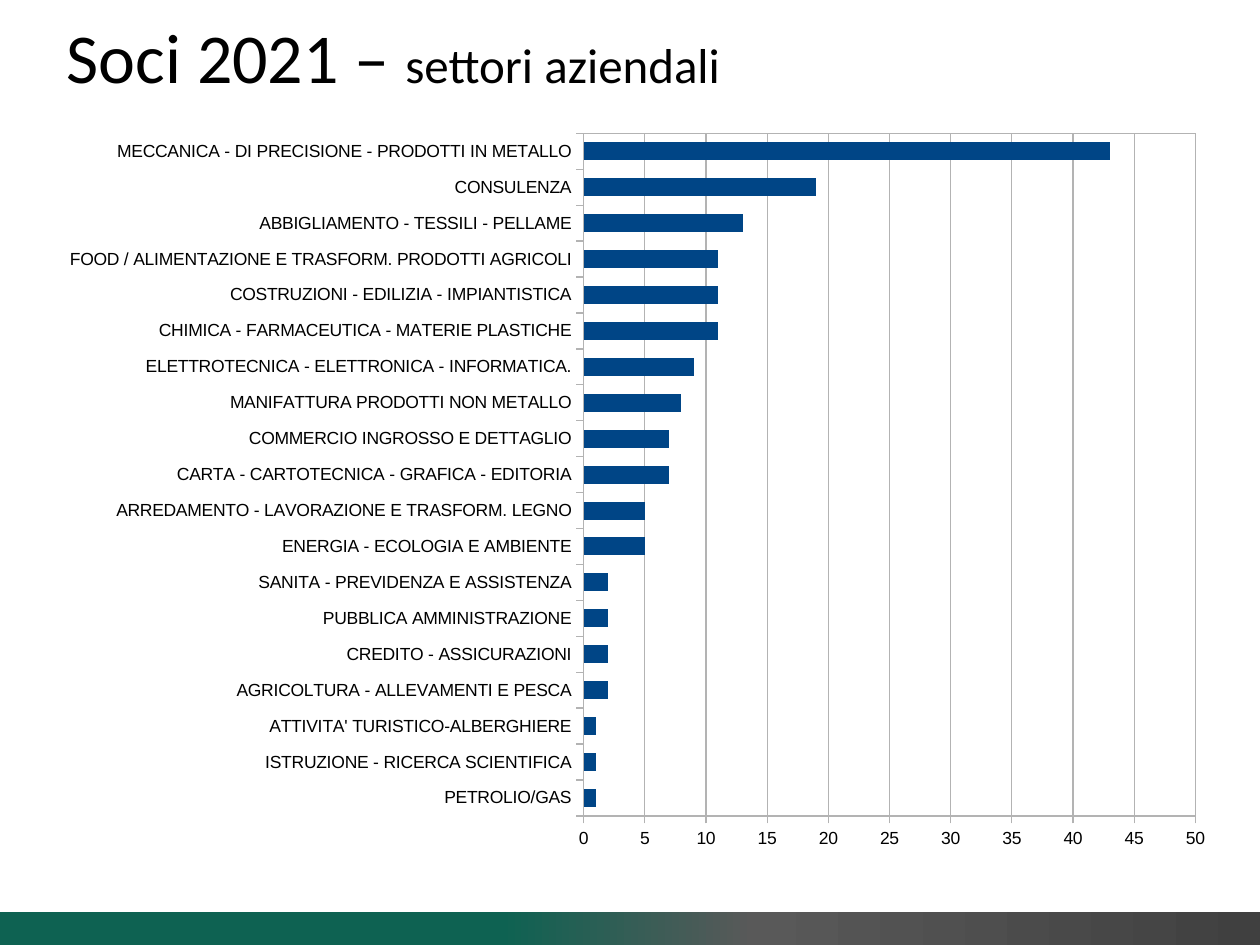
from lxml import etree
from pptx import Presentation
from pptx import util as u
from pptx.chart.data import CategoryChartData
from pptx.dml.color import RGBColor
from pptx.enum import chart as chart_enum, shapes, text
from pptx.oxml import parse_xml
from pptx.oxml.ns import nsdecls, qn

GREY = "B3B3B3"
BLACK = "000000"
SECTORS = [
    ("PETROLIO/GAS", 1),
    ("ISTRUZIONE - RICERCA SCIENTIFICA", 1),
    ("ATTIVITA' TURISTICO-ALBERGHIERE", 1),
    ("AGRICOLTURA - ALLEVAMENTI E PESCA", 2),
    ("CREDITO - ASSICURAZIONI", 2),
    ("PUBBLICA AMMINISTRAZIONE", 2),
    ("SANITA - PREVIDENZA E ASSISTENZA", 2),
    (" ENERGIA - ECOLOGIA E AMBIENTE", 5),
    ("ARREDAMENTO - LAVORAZIONE E TRASFORM. LEGNO", 5),
    ("CARTA - CARTOTECNICA - GRAFICA - EDITORIA", 7),
    ("COMMERCIO INGROSSO E DETTAGLIO", 7),
    ("MANIFATTURA PRODOTTI NON METALLO", 8),
    (" ELETTROTECNICA - ELETTRONICA - INFORMATICA.", 9),
    ("CHIMICA - FARMACEUTICA - MATERIE PLASTICHE", 11),
    ("COSTRUZIONI - EDILIZIA - IMPIANTISTICA", 11),
    ("FOOD / ALIMENTAZIONE E TRASFORM. PRODOTTI AGRICOLI", 11),
    ("ABBIGLIAMENTO - TESSILI - PELLAME", 13),
    ("CONSULENZA", 19),
    ("MECCANICA - DI PRECISIONE - PRODOTTI IN METALLO", 43),
]


def rgb(value):
    return RGBColor.from_string(value)


def format_font(font, name, size, color=BLACK):
    font.name = name
    font.size = u.Pt(size)
    font.color.rgb = rgb(color)


def format_line(line, color=GREY, width=0.75):
    line.color.rgb = rgb(color)
    line.width = u.Pt(width)


def add_title(slide, left, top, width, height):
    title = slide.shapes.title
    title.left, title.top, title.width, title.height = left, top, width, height
    frame = title.text_frame
    frame.word_wrap = True
    frame.auto_size = text.MSO_AUTO_SIZE.NONE
    frame.vertical_anchor = text.MSO_ANCHOR.MIDDLE
    paragraph = frame.paragraphs[0]
    paragraph.alignment = text.PP_ALIGN.LEFT
    for words, size in (("Soci 2021 – ", 40), ("settori aziendali", 28)):
        run = paragraph.add_run()
        run.text = words
        format_font(run.font, "Calibri", size)


def add_footer_band(slide, left, top, width, height):
    band = slide.shapes.add_shape(shapes.MSO_SHAPE.RECTANGLE, left, top, width, height)
    band.shadow.inherit = False
    band.line.fill.background()
    band.fill.gradient()
    band.fill.gradient_angle = 180
    stops = band.fill._xPr.find(".//" + qn("a:gsLst"))
    for stop in list(stops):
        stops.remove(stop)
    for percent, color in ((0, "404040"), (40, "595959"), (60, "0E6252"), (100, "0E6252")):
        stop = etree.SubElement(stops, qn("a:gs"), pos=str(percent * 1000))
        etree.SubElement(stop, qn("a:srgbClr"), val=color)


def set_plot_layout(plot_area, x, y, width, height):
    """Fix the inner plot area, as fractions of the chart."""
    layout = plot_area.find(qn("c:layout"))
    if layout is None:
        layout = etree.Element(qn("c:layout"))
        plot_area.insert(0, layout)
    manual = etree.SubElement(layout, qn("c:manualLayout"))
    settings = (("layoutTarget", "inner"), ("xMode", "edge"), ("yMode", "edge"),
                ("x", x), ("y", y), ("w", width), ("h", height))
    for name, value in settings:
        etree.SubElement(manual, qn("c:" + name), val=str(value))


def area_format(fill, line):
    return parse_xml(
        f'<c:spPr {nsdecls("c", "a")}>{fill}<a:ln w="9525">{line}</a:ln></c:spPr>')


def solid(color):
    return f'<a:solidFill><a:srgbClr val="{color}"/></a:solidFill>'


def add_sector_chart(slide, left, top, width, height):
    data = CategoryChartData()
    data.categories = [name for name, _ in SECTORS]
    data.add_series("Series 1", [count for _, count in SECTORS])
    chart = slide.shapes.add_chart(
        chart_enum.XL_CHART_TYPE.BAR_STACKED, left, top, width, height, data).chart
    chart.has_legend = False
    chart.has_title = False
    format_font(chart.font, "Arial", 10)

    plot = chart.plots[0]
    plot.vary_by_categories = False
    plot.gap_width = 100
    plot.overlap = 100
    bars = plot.series[0].format.fill
    bars.solid()
    bars.fore_color.rgb = rgb("004586")

    for axis in (chart.category_axis, chart.value_axis):
        axis.major_tick_mark = chart_enum.XL_TICK_MARK.OUTSIDE
        axis.minor_tick_mark = chart_enum.XL_TICK_MARK.NONE
        format_font(axis.tick_labels.font, "Arial", 10)
        format_line(axis.format.line)
    chart.value_axis.minimum_scale = 0
    chart.value_axis.maximum_scale = 50
    chart.value_axis.major_unit = 5
    chart.value_axis.has_major_gridlines = True
    format_line(chart.value_axis.major_gridlines.format.line)

    chart_element = chart.element.find(qn("c:chart"))
    plot_area = chart_element.find(qn("c:plotArea"))
    set_plot_layout(plot_area, 0.454, 0.02, 0.517, 0.918)
    plot_area.append(area_format("<a:noFill/>", solid(GREY)))
    chart_element.addnext(area_format(solid("FFFFFF"), "<a:noFill/>"))


def main():
    presentation = Presentation()
    presentation.slide_width = u.Cm(25.4)
    presentation.slide_height = u.Cm(19.05)
    slide = presentation.slides.add_slide(presentation.slide_layouts.get_by_name("Title Only"))
    add_footer_band(slide, u.Cm(-0.1), u.Cm(18.39), u.Cm(25.5), u.Cm(0.69))
    add_title(slide, u.Cm(1.09), u.Cm(-0.48), u.Cm(24.28), u.Cm(3.18))
    add_sector_chart(slide, u.Cm(0.94), u.Cm(2.39), u.Cm(23.85), u.Cm(14.99))
    presentation.save("out.pptx")


if __name__ == "__main__":
    main()
